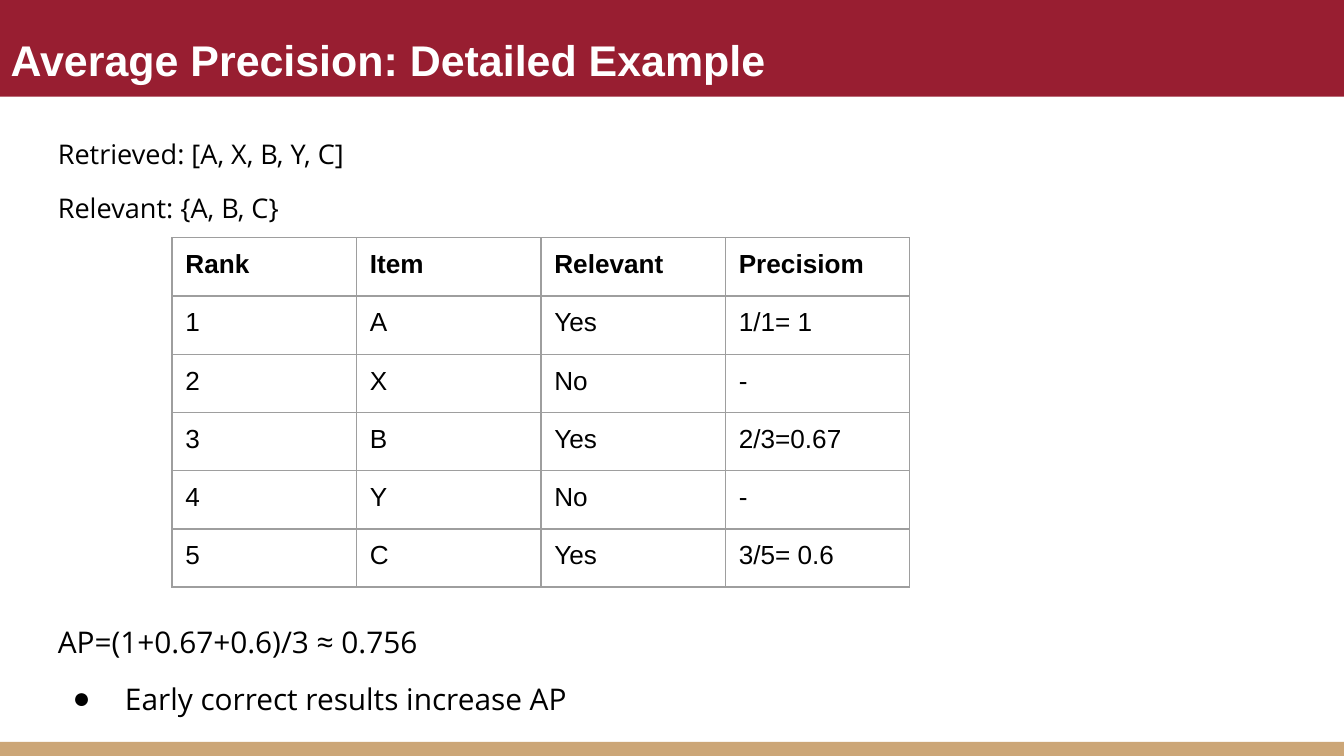
from dataclasses import dataclass

from lxml.etree import SubElement
from pptx import Presentation
from pptx.dml.color import RGBColor as RGB
from pptx.enum.shapes import MSO_SHAPE as Shape
from pptx.enum.text import MSO_ANCHOR as Anchor, MSO_AUTO_SIZE as Fit, PP_ALIGN as Align
from pptx.oxml import parse_xml
from pptx.oxml.ns import nsdecls, qn
from pptx.util import Inches, Pt


@dataclass(frozen=True)
class Theme:
    """Colours, fonts and type sizes of the deck."""
    band: RGB = RGB(0x98, 0x1E, 0x31)
    strip: RGB = RGB(0xCC, 0xA6, 0x77)
    ink: RGB = RGB(0, 0, 0)
    light: RGB = RGB(255, 255, 255)
    rule: str = "9E9E9E"
    heading: str = "Arial"
    body: str = "Open Sans"
    title_size: float = 23
    input_size: float = 14.5
    result_size: float = 16
    table_size: float = 14


THEME = Theme()
UNIT = Inches(0.1)
COLS, ROWS = 100, 56.25
ROWS_DATA = [
    ("Rank", "Item", "Relevant", "Precisiom"),
    ("1", "A", "Yes", "1/1= 1"),
    ("2", "X", "No", "-"),
    ("3", "B", "Yes", "2/3=0.67"),
    ("4", "Y", "No", "-"),
    ("5", "C", "Yes", "3/5= 0.6"),
]


def grid(*cells):
    """Turn grid columns and rows into slide lengths."""
    return [round(c * UNIT) for c in cells]


def write(p, text, *, size, font, color=THEME.ink, bold=False, before=0, bullet=None):
    """Put formatted text into a paragraph."""
    pPr = p._p.get_or_add_pPr()
    indent = Inches(0.39) if bullet else 0
    pPr.set("marL", str(Inches(0.51) if bullet else Inches(0.01)))
    pPr.set("indent", str(-indent))
    if bullet:
        SubElement(pPr, qn("a:buChar"), char=bullet)
    else:
        SubElement(pPr, qn("a:buNone"))
    p.alignment = Align.LEFT
    p.line_spacing = 1.0
    p.space_before = Pt(before)
    r = p.add_run()
    r.text = text
    f = r.font
    f.size, f.name, f.bold = Pt(size), font, bold
    f.color.rgb = color


def place(sp, box, top):
    """Move a placeholder to a box and return its cleared text frame."""
    sp.left, sp.top, sp.width, sp.height = grid(*box)
    tf = sp.text_frame
    tf.word_wrap = True
    tf.auto_size = Fit.NONE
    tf.vertical_anchor = Anchor.TOP
    tf.margin_left = tf.margin_right = tf.margin_bottom = 0
    tf.margin_top = Inches(top)
    return tf


def add_bar(s, box, color):
    """Draw a plain full-colour bar behind the text."""
    sp = s.shapes.add_shape(Shape.RECTANGLE, *grid(*box))
    sp.shadow.inherit = False
    sp.fill.solid()
    sp.fill.fore_color.rgb = color
    sp.line.fill.background()
    s.shapes.title.element.addprevious(sp.element)


def add_header(s, box, text):
    """Fill the title band and its title."""
    x, y, w, h = box
    add_bar(s, box, THEME.band)
    tf = place(s.shapes.title, (x + 0.7, y + 1.6, w - 15.3, h - 1.6), 0.09)
    write(tf.paragraphs[0], text, size=THEME.title_size, font=THEME.heading,
          color=THEME.light, bold=True)


def add_lines(sp, box, top, lines, size, gap):
    """Write text and bullet pairs as paragraphs of a body placeholder."""
    tf = place(sp, box, top)
    for i, (text, bullet) in enumerate(lines):
        p = tf.add_paragraph() if i else tf.paragraphs[0]
        write(p, text, size=size, font=THEME.body, before=gap if i else 0, bullet=bullet)


def rule_cell(cell):
    """Give a cell thin borders and no fill."""
    cell.fill.background()
    tcPr = cell._tc.get_or_add_tcPr()
    for i, side in enumerate("LRTB"):
        tcPr.insert(i, parse_xml(
            f'<a:ln{side} {nsdecls("a")} w="{Pt(0.75)}"><a:solidFill>'
            f'<a:srgbClr val="{THEME.rule}"/></a:solidFill></a:ln{side}>'))


def add_grid_table(s, box, data):
    """Place an evenly divided table with a bold header row."""
    x, y, w, h = grid(*box)
    table = s.shapes.add_table(len(data), len(data[0]), x, y, w, h).table
    table.first_row = table.horz_banding = False
    for i, values in enumerate(data):
        for j, text in enumerate(values):
            cell = table.cell(i, j)
            cell.margin_left = cell.margin_top = Inches(0.09)
            cell.margin_right = cell.margin_bottom = 0
            rule_cell(cell)
            write(cell.text_frame.paragraphs[0], text, size=THEME.table_size,
                  font=THEME.heading, bold=i == 0)


def build_slide(prs):
    """Compose the average precision slide."""
    s = prs.slides.add_slide(prs.slide_layouts.get_by_name("Two Content"))
    add_bar(s, (0, ROWS - 1.05, COLS, 1.05), THEME.strip)
    add_header(s, (0, 0, COLS, 7.2), "Average Precision: Detailed Example")
    inputs, result = s.placeholders[1], s.placeholders[2]
    add_lines(inputs, (4.2, 10, 22.4, 6.8), 0.02,
              [("Retrieved: [A, X, B, Y, C]", None), ("Relevant: {A, B, C}", None)],
              THEME.input_size, 11.6)
    add_lines(result, (4.2, 44.7, 39.1, 8.8), 0.17,
              [("AP=(1+0.67+0.6)/3 ≈ 0.756", None), ("Early correct results increase AP", "●")],
              THEME.result_size, 11.4)
    add_grid_table(s, (12.8, 17.7, 54.9, 26), ROWS_DATA)


def main():
    """Build and save the deck."""
    prs = Presentation()
    prs.slide_width, prs.slide_height = grid(COLS, ROWS)
    build_slide(prs)
    prs.save("out.pptx")


if __name__ == "__main__":
    main()
